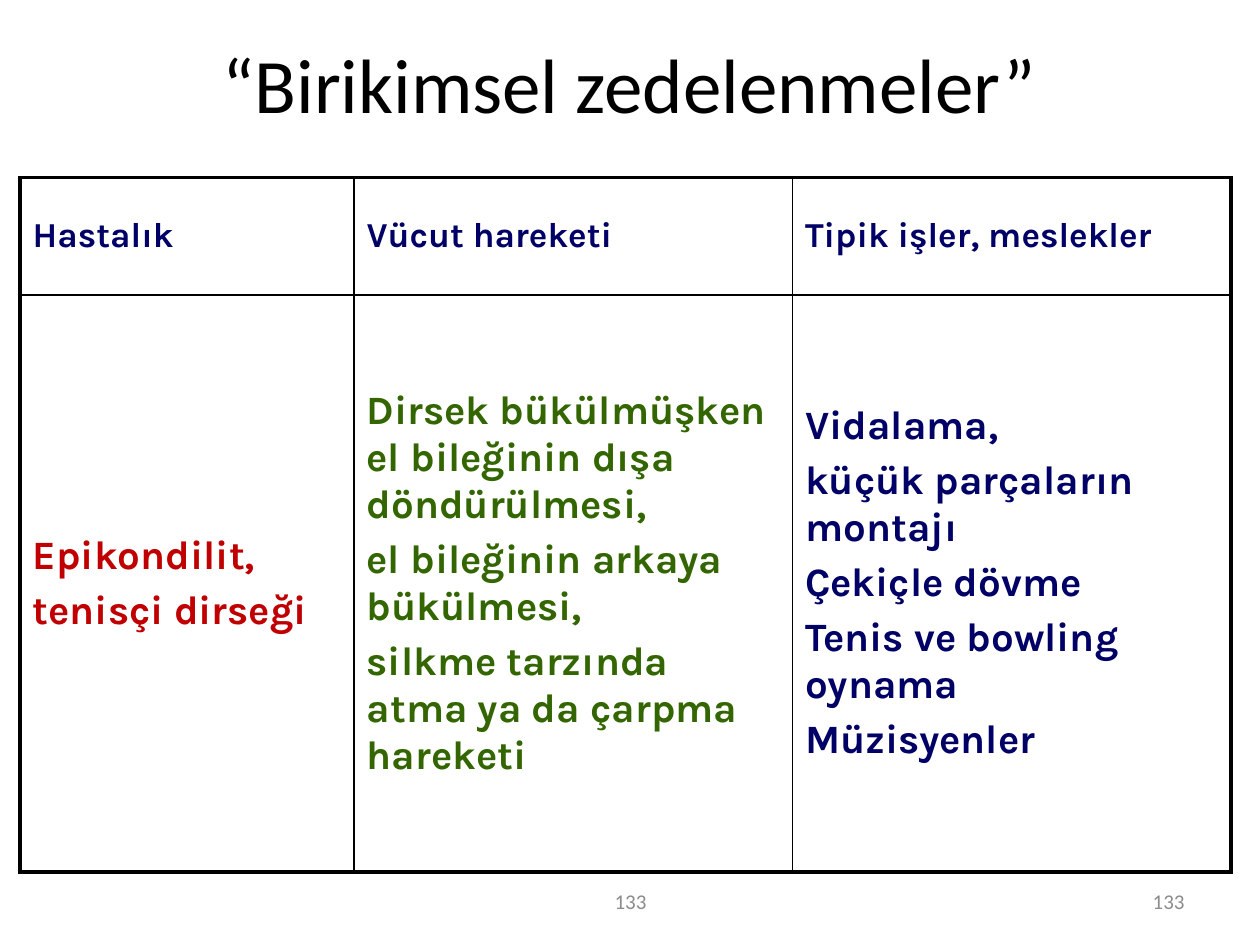
from dataclasses import dataclass

from lxml.etree import SubElement
from pptx import Presentation
from pptx.dml.color import RGBColor
from pptx.enum.text import MSO_ANCHOR, MSO_AUTO_SIZE, PP_ALIGN
from pptx.oxml.ns import qn
from pptx.util import Inches, Pt


@dataclass(frozen=True)
class Theme:
    heading_font: str = "Calibri"
    table_font: str = "Karla"
    black: str = "000000"
    gray: str = "8C8C8C"
    navy: str = "000066"
    red: str = "C00000"
    green: str = "336600"
    title_size: int = 44
    header_size: int = 20
    body_size: int = 23
    number_size: int = 12
    outer_line: float = 2.25
    inner_line: float = 1


THEME = Theme()
TITLE = "“Birikimsel zedelenmeler”"
PAGE_NUMBER = "133"
HEADERS = ["Hastalık", "Vücut hareketi", "Tipik işler, meslekler"]
DETAILS = [
    (["Epikondilit,", "tenisçi dirseği"], THEME.red),
    (["Dirsek bükülmüşken el bileğinin dışa döndürülmesi,",
      "el bileğinin arkaya bükülmesi,",
      "silkme tarzında atma ya da çarpma hareketi"], THEME.green),
    (["Vidalama,", "küçük parçaların montajı", "Çekiçle dövme",
      "Tenis ve bowling oynama", "Müzisyenler"], THEME.navy),
]
ROWS = [
    [([header], THEME.navy, THEME.header_size) for header in HEADERS],
    [(lines, color, THEME.body_size) for lines, color in DETAILS],
]
COLUMN_WIDTHS = [2.65, 3.48, 3.48]
ROW_HEIGHTS = [0.93, 4.58]
TABLE_LEFT, TABLE_TOP = 0.16, 1.41
NUMBER_TOP, NUMBER_HEIGHT = 6.95, 0.4
NUMBER_BOXES = [(3.42, 3.17, PP_ALIGN.CENTER), (7.17, 2.33, PP_ALIGN.RIGHT)]


def write_text(frame, lines, *, size, color, font=THEME.heading_font,
               bold=False, align=PP_ALIGN.LEFT, space_share=0.2):
    """Fill a frame; later paragraphs get a share of the type size before them."""
    frame.word_wrap = True
    for index, line in enumerate(lines):
        paragraph = frame.add_paragraph() if index else frame.paragraphs[0]
        paragraph.alignment = align
        paragraph.space_before = Pt(size * space_share if index else 0)
        run = paragraph.add_run()
        run.text = line
        run.font.name = font
        run.font.size = Pt(size)
        run.font.bold = bold
        run.font.color.rgb = RGBColor.from_string(color)


def set_borders(cell, widths):
    """Draw the cell's lines; widths maps L, R, T and B, in that order, to points."""
    properties = cell._tc.get_or_add_tcPr()
    for index, (side, width) in enumerate(widths.items()):
        line = SubElement(properties, qn(f"a:ln{side}"), w=str(Pt(width)))
        fill = SubElement(line, qn("a:solidFill"))
        SubElement(fill, qn("a:srgbClr"), val=THEME.black)
        properties.insert(index, line)


def add_title(slide):
    title = slide.shapes.title
    title.left, title.top = Inches(0.5), Inches(0.3)
    title.width, title.height = Inches(9), Inches(0.72)
    frame = title.text_frame
    frame.auto_size = MSO_AUTO_SIZE.NONE
    frame.vertical_anchor = MSO_ANCHOR.MIDDLE
    write_text(frame, [TITLE], size=THEME.title_size, color=THEME.black,
               align=PP_ALIGN.CENTER)


def add_disease_table(slide):
    row_count, column_count = len(ROWS), len(HEADERS)
    table = slide.shapes.add_table(
        row_count, column_count, Inches(TABLE_LEFT), Inches(TABLE_TOP),
        Inches(sum(COLUMN_WIDTHS)), Inches(sum(ROW_HEIGHTS))).table
    table.first_row = table.horz_banding = False
    for column, width in zip(table.columns, COLUMN_WIDTHS):
        column.width = Inches(width)
    for row, height in zip(table.rows, ROW_HEIGHTS):
        row.height = Inches(height)
    for row_index, row in enumerate(ROWS):
        for column_index, (lines, color, size) in enumerate(row):
            cell = table.cell(row_index, column_index)
            cell.fill.background()
            cell.vertical_anchor = MSO_ANCHOR.MIDDLE
            write_text(cell.text_frame, lines, size=size, color=color,
                       font=THEME.table_font, bold=True)
            on_edge = {
                "L": column_index == 0,
                "R": column_index == column_count - 1,
                "T": row_index == 0,
                "B": row_index == row_count - 1,
            }
            set_borders(cell, {
                side: THEME.outer_line if outer else THEME.inner_line
                for side, outer in on_edge.items()})


def add_page_numbers(slide):
    for left, width, align in NUMBER_BOXES:
        box = slide.shapes.add_textbox(
            Inches(left), Inches(NUMBER_TOP), Inches(width), Inches(NUMBER_HEIGHT))
        box.text_frame.vertical_anchor = MSO_ANCHOR.MIDDLE
        write_text(box.text_frame, [PAGE_NUMBER], size=THEME.number_size,
                   color=THEME.gray, align=align)


def main():
    presentation = Presentation()
    presentation.slide_width, presentation.slide_height = Inches(10), Inches(7.5)
    slide = presentation.slides.add_slide(
        presentation.slide_layouts.get_by_name("Title Only"))
    add_title(slide)
    add_disease_table(slide)
    add_page_numbers(slide)
    presentation.save("out.pptx")


if __name__ == "__main__":
    main()
